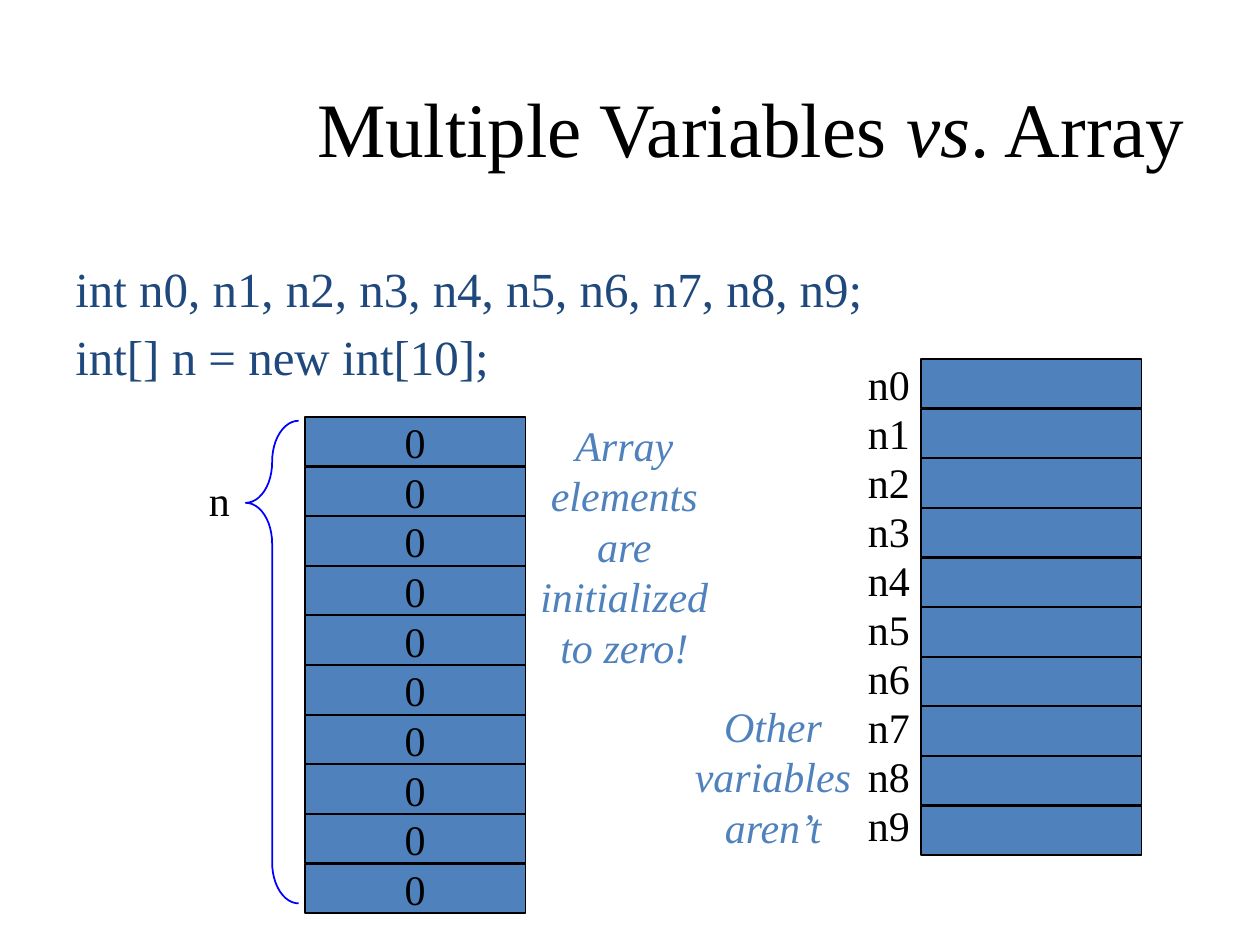
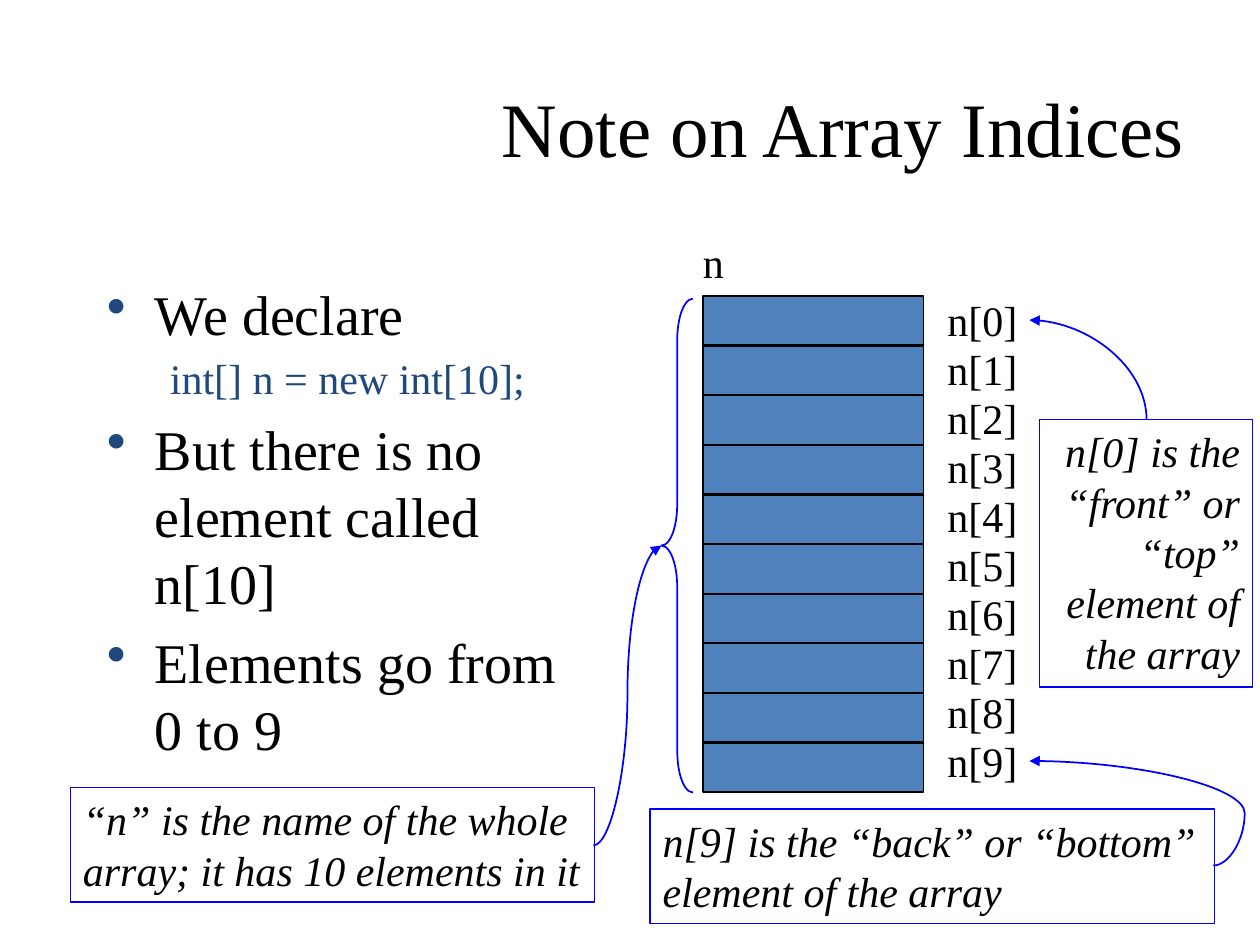
import dataclasses

import pptx
import pptx.dml.color
import pptx.enum.shapes
import pptx.enum.text
import pptx.oxml.ns
import pptx.oxml.xmlchemy
import pptx.util
from lxml import etree

Inches = pptx.util.Inches
Pt = pptx.util.Pt
RGB = pptx.dml.color.RGBColor
Align = pptx.enum.text.PP_ALIGN
Anchor = pptx.enum.text.MSO_ANCHOR
Shape = pptx.enum.shapes.MSO_SHAPE
qn = pptx.oxml.ns.qn


@dataclasses.dataclass(frozen=True)
class Theme:
    font: str = "Times New Roman"
    ink: RGB = RGB.from_string("000000")
    code: RGB = RGB.from_string("1F497D")
    cell: RGB = RGB.from_string("4F81BD")
    pointer: RGB = RGB.from_string("0000FF")
    title_size: int = 44
    bullet_size: int = 32
    code_size: int = 28
    label_size: int = 24


theme = Theme()


def write(shape, lines, size=theme.label_size, color=theme.ink, italic=False,
          align=Align.LEFT, anchor=Anchor.TOP, wrap=True):
    """Fill a shape with one paragraph per line, all in one style."""
    frame = shape.text_frame
    frame.text = "\n".join(lines)
    frame.word_wrap = wrap
    frame.vertical_anchor = anchor
    for paragraph in frame.paragraphs:
        paragraph.alignment = align
        for run in paragraph.runs:
            run.font.name = theme.font
            run.font.size = Pt(size)
            run.font.color.rgb = color
            run.font.italic = italic


def draw(shapes, preset, box, line, fill=None):
    """Add a preset shape with a thin outline and an optional fill."""
    shape = shapes.add_shape(preset, *map(Inches, box))
    shape.shadow.inherit = False
    shape.line.color.rgb = line
    shape.line.width = Pt(1)
    if fill is None:
        shape.fill.background()
    else:
        shape.fill.solid()
        shape.fill.fore_color.rgb = fill
    return shape


deck = pptx.Presentation()
deck.slide_width = Inches(10)
deck.slide_height = Inches(7.5)
blank = deck.slide_layouts[6]
comparison = deck.slides.add_slide(blank).shapes
indices = deck.slides.add_slide(blank).shapes

# Titles
titles = [
    (comparison, [("Multiple Variables ", False), ("vs", True), (". Array", False)]),
    (indices, [("Note on Array Indices", False)]),
]
for shapes, parts in titles:
    title = shapes.add_textbox(Inches(0.5), Inches(0.3), Inches(9), Inches(1.12))
    write(title, [""], align=Align.RIGHT, anchor=Anchor.BOTTOM)
    for text, italic in parts:
        run = title.text_frame.paragraphs[0].add_run()
        run.text = text
        run.font.name = theme.font
        run.font.size = Pt(theme.title_size)
        run.font.color.rgb = theme.ink
        run.font.italic = italic

# Declarations and bullets
declarations = comparison.add_textbox(Inches(0.5), Inches(2), Inches(9), Inches(5.08))
write(declarations, ["int n0, n1, n2, n3, n4, n5, n6, n7, n8, n9;", "int[] n = new int[10];"],
      theme.code_size, theme.code)
declarations.text_frame.paragraphs[1].space_before = Pt(0.2 * theme.code_size)

remarks = indices.add_textbox(Inches(0.75), Inches(2.17), Inches(4.08), Inches(4.5))
write(remarks, ["We declare", "int[] n = new int[10];",
                "But there is no element called n[10]", "Elements go from 0 to 9"],
      theme.bullet_size)
for position, paragraph in enumerate(remarks.text_frame.paragraphs):
    properties = paragraph._p.get_or_add_pPr()
    if position == 1:
        properties.set("lvl", "1")
        properties.set("marL", str(Inches(0.81)))
        properties.set("indent", str(Inches(-0.31)))
        paragraph.space_before = Pt(3.4)
        paragraph.runs[0].font.size = Pt(theme.label_size)
        paragraph.runs[0].font.color.rgb = theme.code
        continue
    properties.set("marL", str(Inches(0.38)))
    properties.set("indent", str(Inches(-0.38)))
    bullet_color = etree.SubElement(properties, qn("a:buClr"))
    etree.SubElement(bullet_color, qn("a:srgbClr"), val=str(theme.code))
    etree.SubElement(properties, qn("a:buChar"), char="•")
    if position:
        paragraph.space_before = Pt(0.2 * theme.bullet_size)

# Memory cells
element_count = 10
cell_pitch = 3.94 / element_count
n_array = comparison.add_group_shape().shapes
memory_columns = [
    (comparison, 7.31, 2.85, ""),
    (n_array, 2.42, 3.31, "0"),
    (indices, 5.58, 2.35, ""),
]
for shapes, left, top, value in memory_columns:
    for index in range(element_count):
        cell = draw(shapes, Shape.RECTANGLE, (left, top + index * cell_pitch, 1.75, 0.39),
                    theme.ink, theme.cell)
        if value:
            write(cell, [value], align=Align.CENTER, anchor=Anchor.MIDDLE, wrap=False)

# Names beside the cells
label_pitch = 3.5 / (element_count - 1)
label_columns = [
    (comparison, 6.79, 2.8, 0.53, "n{}"),
    (indices, 7.42, 2.29, 0.76, "n[{}]"),
]
for shapes, left, top, width, pattern in label_columns:
    for index in range(element_count):
        label = shapes.add_textbox(Inches(left), Inches(top + index * label_pitch),
                                   Inches(width), Inches(0.5))
        write(label, [pattern.format(index)], wrap=False)

# Braces with the name of the array
braces = [
    (n_array, (1.95, 3.34, 0.42, 3.83), (0.77, 0.17), (1.56, 3.72)),
    (indices, (5.25, 2.37, 0.25, 3.92), (1.31, 0.5), (5.48, 1.83)),
]
for shapes, box, bends, name_corner in braces:
    brace = draw(shapes, Shape.LEFT_BRACE, box, theme.pointer)
    for position, bend in enumerate(bends):
        brace.adjustments[position] = bend
    array_name = shapes.add_textbox(*map(Inches, name_corner), Inches(0.37), Inches(0.5))
    write(array_name, ["n"], wrap=False)

# Comments on initial values
comments = [
    ((4.13, 3.28, 1.65, 2.12), "Array elements are initialized to zero!"),
    ((5.31, 5.51, 1.65, 1.31), "Other variables aren’t"),
]
for box, text in comments:
    comment = comparison.add_textbox(*map(Inches, box))
    write(comment, [text], color=theme.cell, italic=True, align=Align.CENTER)

# Callouts
callouts = [
    ((0.56, 6.25, 4.16, 0.91), Align.LEFT, False,
     ["“n” is the name of the whole", "array; it has 10 elements in it"]),
    ((5.16, 6.42, 4.48, 0.91), Align.LEFT, False,
     ["n[9] is the “back” or “bottom”", "element of the array"]),
    ((8.25, 3.33, 1.69, 2.12), Align.RIGHT, True,
     ["n[0] is the “front” or “top” element of the array"]),
]
for box, align, wrap, lines in callouts:
    callout = draw(indices, Shape.RECTANGLE, box, theme.pointer)
    write(callout, lines, italic=True, align=align, wrap=wrap)

# Curved pointers: start, end, preset, bend, arrowhead
pointers = [
    ((4.71, 6.71), (5.25, 4.33), "curvedConnector3", 50000, "a:tailEnd"),
    ((9.63, 6.87), (8.17, 6.04), "curvedConnector3", -17100, "a:tailEnd"),
    ((8.17, 2.54), (9.1, 3.33), "curvedConnector2", None, "a:headEnd"),
]
for start, end, preset, bend, arrowhead in pointers:
    pointer = indices.add_connector(pptx.enum.shapes.MSO_CONNECTOR.CURVE,
                                    *map(Inches, start + end))
    pointer.line.color.rgb = theme.pointer
    pointer.line.width = Pt(1)
    etree.SubElement(pointer.line._get_or_add_ln(), qn(arrowhead), type="triangle")
    properties = pointer._element.spPr
    etree.SubElement(properties, qn("a:effectLst"))
    geometry = properties.find(qn("a:prstGeom"))
    geometry.set("prst", preset)
    if bend is not None:
        guides = geometry.find(qn("a:avLst"))
        etree.SubElement(guides, qn("a:gd"), name="adj1", fmla=f"val {bend}")

deck.save("out.pptx")
